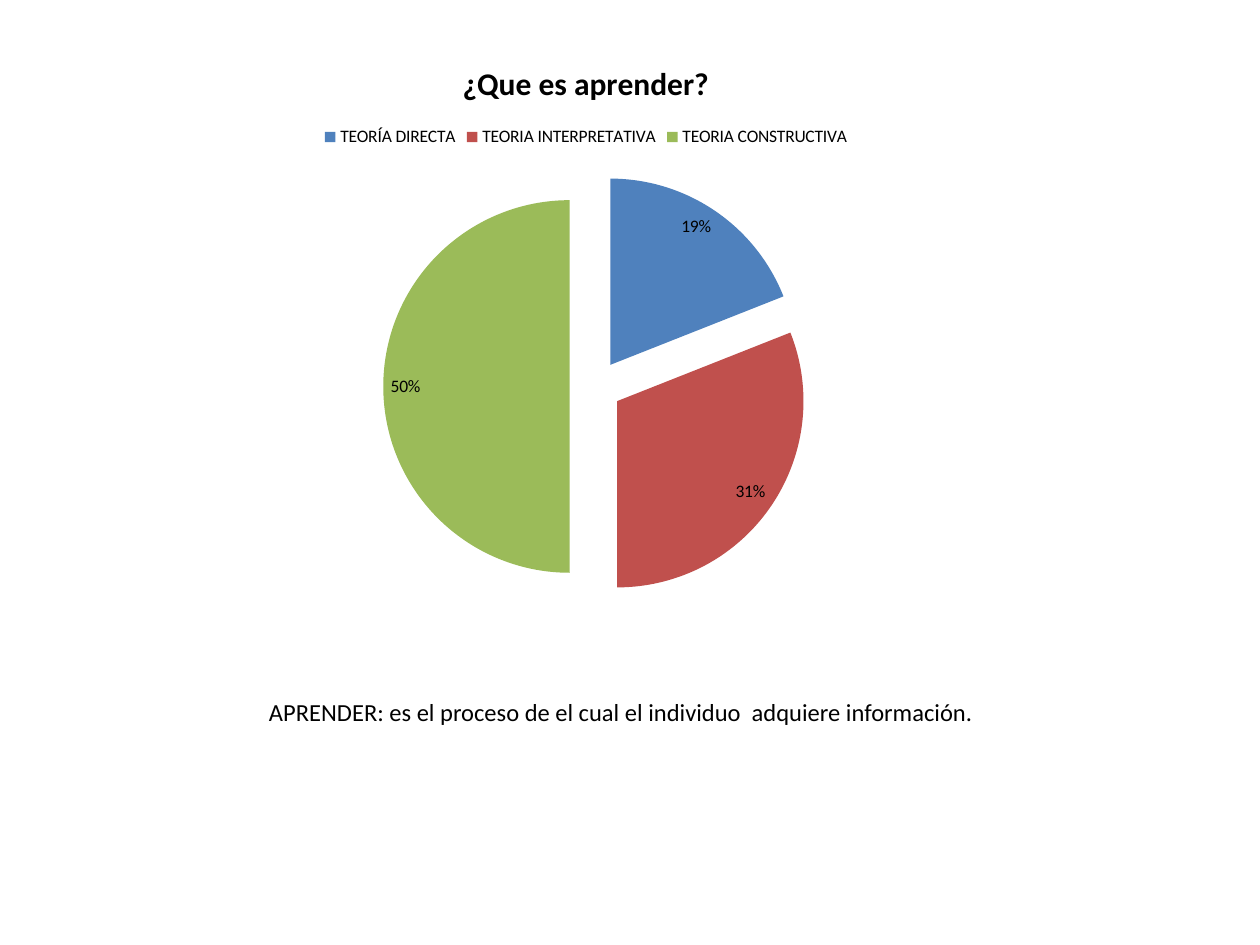
from dataclasses import dataclass

from lxml import etree
from pptx import Presentation
from pptx import util as u
from pptx.chart import data as cd
from pptx.dml import color
from pptx.enum import chart as ch, text
from pptx.oxml import ns


@dataclass(frozen=True)
class Theme:
    font: str = "Calibri"
    ink: str = "000000"
    slices: tuple = ("4F81BD", "C0504D", "9BBB59")
    head: int = 18
    body: int = 14
    small: int = 10


THEME = Theme()
SHARES = {
    "TEORÍA DIRECTA": 19,
    "TEORIA INTERPRETATIVA": 31,
    "TEORIA CONSTRUCTIVA": 50,
}
PLOT = {"x": 0.09, "y": 0.22, "w": 0.84, "h": 0.68}
BURST = 14


def put(obj, **vals):
    for name, val in vals.items():
        setattr(obj, name, val)


def style(font, size, bold=False):
    put(font, name=THEME.font, size=u.Pt(size), bold=bold)
    font.color.rgb = color.RGBColor.from_string(THEME.ink)


def node(tag, val=None):
    elem = etree.Element(ns.qn(f"c:{tag}"))
    if val is not None:
        elem.set("val", str(val))
    return elem


def place(chart):
    """Fix the inner plot area as fractions of the chart."""
    area = chart.plots[0]._element.getparent()
    for old in area.findall(ns.qn("c:layout")):
        area.remove(old)
    frame, rule = node("layout"), node("manualLayout")
    rule.append(node("layoutTarget", "inner"))
    for tag in ("xMode", "yMode"):
        rule.append(node(tag, "edge"))
    for tag, val in PLOT.items():
        rule.append(node(tag, val))
    frame.append(rule)
    area.insert(0, frame)


def paint(series):
    """Colour the slices and pull them apart."""
    for i, tone in enumerate(THEME.slices):
        fill = series.points[i].format.fill
        fill.solid()
        fill.fore_color.rgb = color.RGBColor.from_string(tone)
    first = series._element.find(ns.qn("c:dPt"))
    first.addprevious(node("explosion", BURST))


def add_pie(slide, title, shares, box):
    data = cd.CategoryChartData()
    data.categories = list(shares)
    data.add_series("Series 1", list(shares.values()))
    chart = slide.shapes.add_chart(
        ch.XL_CHART_TYPE.PIE, *map(u.Pt, box), data).chart
    style(chart.font, THEME.small)

    put(chart, has_title=True, has_legend=True)
    frame = chart.chart_title.text_frame
    frame.text = title
    style(frame.paragraphs[0].runs[0].font, THEME.head, bold=True)
    put(chart.legend, position=ch.XL_LEGEND_POSITION.TOP,
        include_in_layout=False)

    plot = chart.plots[0]
    put(plot, vary_by_categories=True, has_data_labels=True)
    put(plot.data_labels, show_percentage=True, show_value=False,
        number_format="0%", number_format_is_linked=False,
        position=ch.XL_LABEL_POSITION.INSIDE_END)
    style(plot.data_labels.font, THEME.small)
    paint(plot.series[0])
    place(chart)


def add_text(slide, words, box):
    frame = slide.shapes.add_textbox(*map(u.Pt, box)).text_frame
    put(frame, word_wrap=True, vertical_anchor=text.MSO_ANCHOR.MIDDLE)
    para = frame.paragraphs[0]
    put(para, text=words, alignment=text.PP_ALIGN.CENTER)
    style(para.runs[0].font, THEME.body)


def main():
    deck = Presentation()
    put(deck, slide_width=u.Pt(720), slide_height=u.Pt(540))
    slide = deck.slides.add_slide(deck.slide_layouts[6])
    add_pie(slide, "¿Que es aprender?", SHARES, (54, 21, 561.6, 357))
    add_text(
        slide,
        "APRENDER: es el proceso de el cual el individuo  adquiere información.",
        (31, 287.3, 648, 238.3))
    deck.save("out.pptx")


if __name__ == "__main__":
    main()
